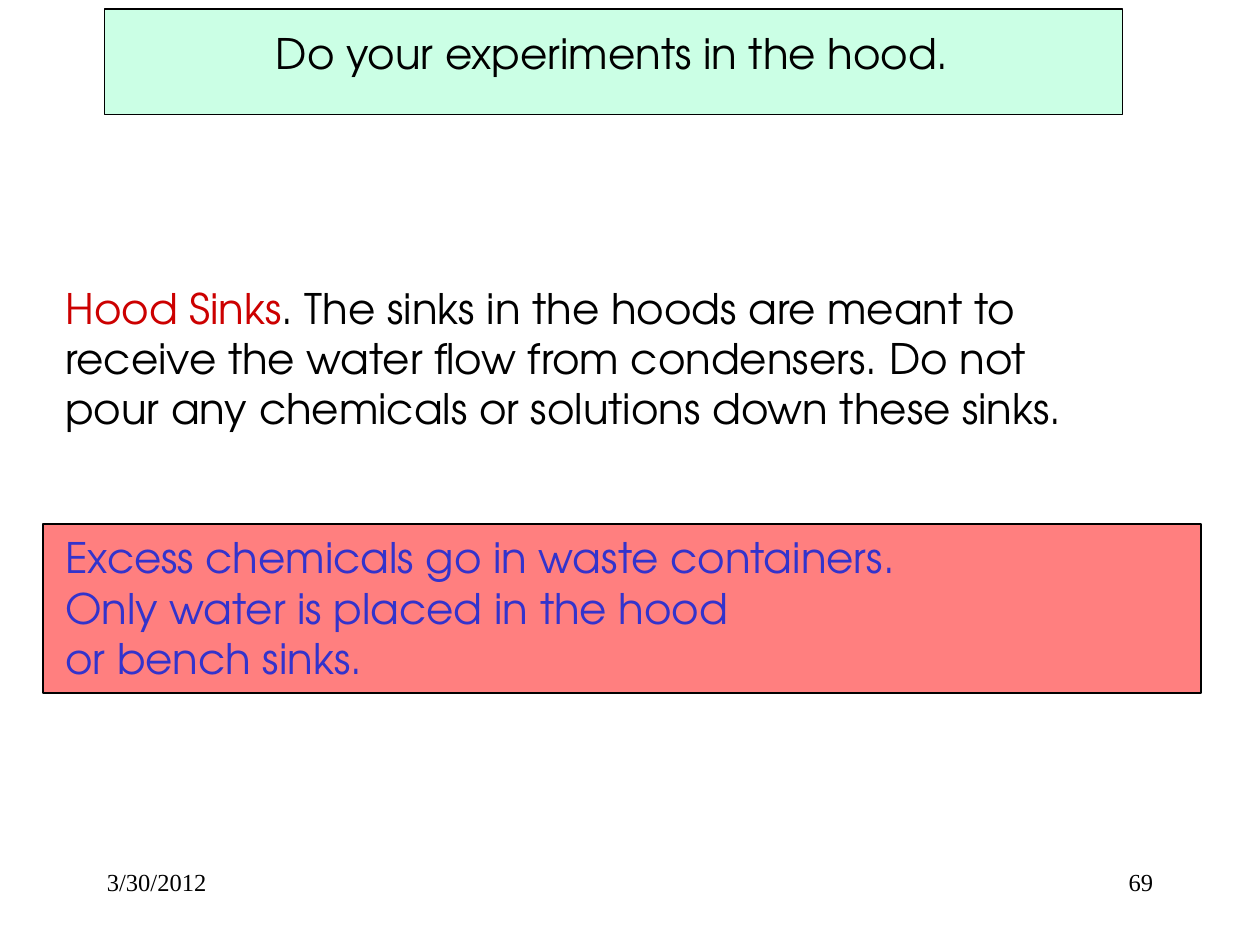
from lxml import etree
from pptx import Presentation
from pptx.dml.color import RGBColor
from pptx.enum import shapes, text
from pptx.oxml.ns import qn
from pptx.util import Inches, Pt

BLACK = RGBColor(0x00, 0x00, 0x00)
RED = RGBColor(0xFF, 0x00, 0x00)
DARK_RED = RGBColor(0xCC, 0x00, 0x00)
MINT = RGBColor(0x99, 0xFF, 0xCC)
BLUE = RGBColor(0x33, 0x33, 0xCC)
BODY_FONT = "TeX Gyre Adventor"
FOOTER_FONT = "Times New Roman"
LEFT, CENTER, RIGHT = (text.PP_ALIGN.LEFT, text.PP_ALIGN.CENTER,
                       text.PP_ALIGN.RIGHT)


def add_panel(page, box, color):
    """Half-transparent rectangle with a thin black outline."""
    panel = page.shapes.add_shape(shapes.MSO_SHAPE.RECTANGLE,
                                  *map(Inches, box))
    panel.shadow.inherit = False
    panel.fill.solid()
    panel.fill.fore_color.rgb = color
    tint = panel.fill._xPr.find(qn("a:solidFill"))[0]
    etree.SubElement(tint, qn("a:alpha"), val="50000")
    panel.line.color.rgb = BLACK
    panel.line.width = Pt(1)


def write(frame, paragraphs, align=LEFT, font=BODY_FONT, size=24):
    """Fill a frame; each paragraph is a list of (wording, colour) spans."""
    frame.word_wrap = True
    frame.auto_size = text.MSO_AUTO_SIZE.NONE
    frame.vertical_anchor = text.MSO_ANCHOR.TOP
    for index, spans in enumerate(paragraphs):
        para = frame.add_paragraph() if index else frame.paragraphs[0]
        para.alignment = align
        for wording, color in spans:
            span = para.add_run()
            span.text = wording
            span.font.name = font
            span.font.size = Pt(size)
            span.font.color.rgb = color


def add_text(page, box, paragraphs, **style):
    frame = page.shapes.add_textbox(*map(Inches, box)).text_frame
    write(frame, paragraphs, **style)
    return frame


def add_heading(page, box):
    left, top, width, height = box
    add_panel(page, box, MINT)
    title = page.shapes.title
    title.left, title.top = Inches(left + 0.55), Inches(top + 0.1)
    title.width, title.height = Inches(width - 1.12), Inches(0.51)
    write(title.text_frame, [[("Do your experiments in the hood.", BLACK)]],
          align=CENTER)
    # Bring the title in front of its translucent panel
    page.shapes._spTree.append(title._element)


def add_sink_rule(page, box):
    frame = add_text(page, box, [[
        ("Hood Sinks", DARK_RED),
        (". The sinks in the hoods are meant to receive the water flow from "
         "condensers. Do not pour any chemicals or solutions down these "
         "sinks.", BLACK)]])
    frame.margin_right = Inches(0.4)


def add_waste_warning(page, box):
    left, top, width, height = box
    add_panel(page, box, RED)
    lines = ["Excess chemicals go in waste containers.",
             "Only water is placed in the hood",
             "or bench sinks."]
    add_text(page, (left + 0.08, top + 0.01, 7.8, height - 0.03),
             [[(line, BLUE)] for line in lines])


def add_footer(page, box):
    left, top, width, height = box
    part = 2.08
    for x, wording, align in ((left, "3/30/2012", LEFT),
                              (left + width - part, "69", RIGHT)):
        add_text(page, (x, top, part, height), [[(wording, BLACK)]],
                 align=align, font=FOOTER_FONT, size=14)


def main():
    deck = Presentation()
    deck.slide_width, deck.slide_height = Inches(10), Inches(7.5)
    page = deck.slides.add_slide(deck.slide_layouts[5])
    add_footer(page, (0.75, 6.83, 8.5, 0.5))
    add_sink_rule(page, (0.42, 2.19, 8.75, 1.31))
    add_waste_warning(page, (0.34, 4.16, 9.19, 1.34))
    add_heading(page, (0.83, 0.07, 8.08, 0.84))
    deck.save("out.pptx")


if __name__ == "__main__":
    main()
